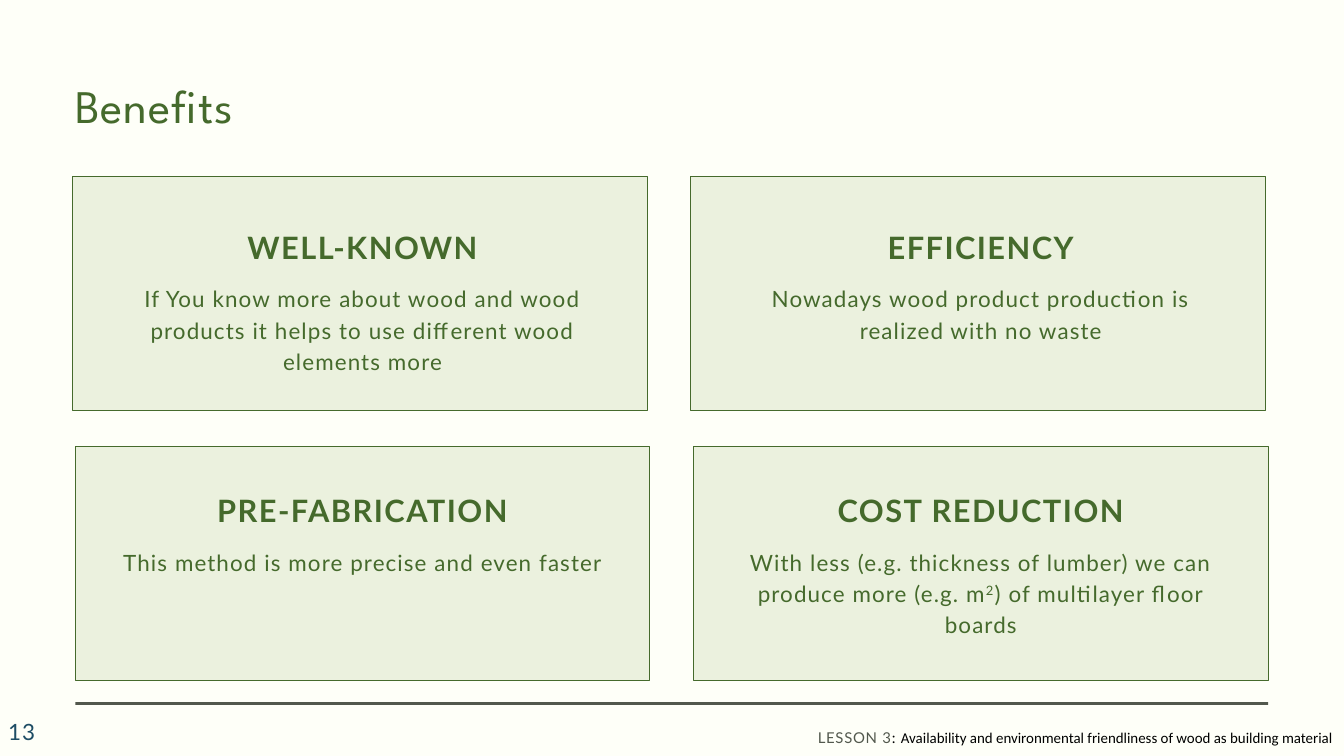
from dataclasses import dataclass

from pptx import Presentation
from pptx.dml.color import RGBColor
from pptx.enum.shapes import MSO_SHAPE
from pptx.enum.text import MSO_ANCHOR, MSO_AUTO_SIZE, PP_ALIGN
from pptx.shapes.autoshape import Shape
from pptx.slide import Slide
from pptx.util import Pt


@dataclass(frozen=True)
class TextStyle:
    font: str
    size: float
    color: str
    spacing: float = 0
    bold: bool = False


@dataclass(frozen=True)
class Theme:
    background: str = "FEFFF8"
    card: str = "EBF1DE"
    green: str = "456A2C"
    rule: str = "52584D"
    title: TextStyle = TextStyle("League Spartan", 50, "456A2C", 1)
    heading: TextStyle = TextStyle("Lato", 33, "456A2C", 1.6, True)
    body: TextStyle = TextStyle("Lato", 24, "456A2C", 1.2)
    number: TextStyle = TextStyle("Lato", 24, "1E4D65", 1.2)
    lesson: TextStyle = TextStyle("Lato", 16, "52584D", 0.8)
    separator: TextStyle = TextStyle("Lato", 16, "000000", 0.8)
    topic: TextStyle = TextStyle("Calibri", 16, "000000")


@dataclass(frozen=True)
class Span:
    text: str
    style: TextStyle
    superscript: bool = False


@dataclass(frozen=True)
class Box:
    left: float
    top: float
    width: float
    height: float


@dataclass(frozen=True)
class Row:
    card_left: float
    card_top: float
    heading_top: float


@dataclass(frozen=True)
class Benefit:
    heading: str
    body: list[Span]
    lines: int


THEME = Theme()
MARGIN = 80.64
COLUMN_PITCH = 662.4
CARD_WIDTH, CARD_HEIGHT = 615.6, 250.56
TEXT_LEFT, TEXT_WIDTH = 122.4, 532.08
HEADING_TO_BODY = 57.6
BODY_LINE = 33.6

ROWS = [Row(77.76, 188.64, 243.36), Row(MARGIN, 478.08, 525.6)]
BENEFITS = [
    [
        Benefit("WELL-KNOWN", [Span("If You know more about wood and wood products it helps "
                                    "to use different wood elements more", THEME.body)], 3),
        Benefit("EFFICIENCY", [Span("Nowadays wood product production is realized "
                                    "with no waste", THEME.body)], 2),
    ],
    [
        Benefit("PRE-FABRICATION",
                [Span("This method is more precise and even faster", THEME.body)], 1),
        Benefit("COST REDUCTION", [
            Span("With less (e.g. thickness of lumber) we can produce more (e.g. m", THEME.body),
            Span("2", THEME.body, superscript=True),
            Span(") of multilayer floor boards", THEME.body),
        ], 3),
    ],
]


def place(shape: Shape, box: Box) -> None:
    shape.left, shape.top = Pt(box.left), Pt(box.top)
    shape.width, shape.height = Pt(box.width), Pt(box.height)


def write(shape: Shape, spans: list[Span], line_height: float,
          alignment: PP_ALIGN = PP_ALIGN.LEFT) -> None:
    """Fill a shape with one paragraph, without insets."""
    frame = shape.text_frame
    frame.word_wrap = True
    frame.auto_size = MSO_AUTO_SIZE.NONE
    frame.vertical_anchor = MSO_ANCHOR.TOP
    frame.margin_left = frame.margin_right = frame.margin_top = frame.margin_bottom = 0
    paragraph = frame.paragraphs[0]
    paragraph.alignment = alignment
    paragraph.line_spacing = Pt(line_height)
    for span in spans:
        run = paragraph.add_run()
        run.text = span.text
        font = run.font
        font.name, font.size, font.bold = span.style.font, Pt(span.style.size), span.style.bold
        font.color.rgb = RGBColor.from_string(span.style.color)
        properties = run._r.get_or_add_rPr()
        properties.set("spc", str(round(span.style.spacing * 100)))
        if span.superscript:
            properties.set("baseline", "30000")


def add_text(slide: Slide, box: Box, spans: list[Span], line_height: float,
             alignment: PP_ALIGN = PP_ALIGN.LEFT) -> Shape:
    shape = slide.shapes.add_textbox(0, 0, 0, 0)
    place(shape, box)
    write(shape, spans, line_height, alignment)
    return shape


def add_rectangle(slide: Slide, box: Box, fill: str, outline: str | None = None) -> None:
    shape = slide.shapes.add_shape(MSO_SHAPE.RECTANGLE, 0, 0, 0, 0)
    place(shape, box)
    shape.shadow.inherit = False
    shape.fill.solid()
    shape.fill.fore_color.rgb = RGBColor.from_string(fill)
    if outline:
        shape.line.color.rgb = RGBColor.from_string(outline)
        shape.line.width = Pt(0.75)
    else:
        shape.line.fill.background()


def add_benefit(slide: Slide, benefit: Benefit, row: Row, column: int) -> None:
    shift = column * COLUMN_PITCH
    left = TEXT_LEFT + shift
    add_rectangle(slide, Box(row.card_left + shift, row.card_top, CARD_WIDTH, CARD_HEIGHT),
                  THEME.card, THEME.green)
    add_text(slide, Box(left, row.heading_top, TEXT_WIDTH, 41.76),
             [Span(benefit.heading, THEME.heading)], 41.2, PP_ALIGN.CENTER)
    add_text(slide, Box(left, row.heading_top + HEADING_TO_BODY, TEXT_WIDTH,
                        benefit.lines * BODY_LINE),
             benefit.body, BODY_LINE, PP_ALIGN.CENTER)


def add_footer(slide: Slide) -> None:
    add_rectangle(slide, Box(MARGIN, 752.4, 1278, 2.88), THEME.rule)
    number = add_text(slide, Box(8.64, 769.68, 160, 28.8), [Span("13", THEME.number)], 28.8)
    number.text_frame.vertical_anchor = MSO_ANCHOR.MIDDLE
    add_text(slide, Box(876.24, 763.2, 563.76, 36), [
        Span("LESSON 3", THEME.lesson),
        Span(": ", THEME.separator),
        Span("Availability and environmental friendliness of wood as building material",
             THEME.topic),
    ], 36.5)


def main() -> None:
    presentation = Presentation()
    presentation.slide_width, presentation.slide_height = Pt(1440), Pt(810)
    slide = presentation.slides.add_slide(presentation.slide_layouts.get_by_name("Title Only"))
    slide.background.fill.solid()
    slide.background.fill.fore_color.rgb = RGBColor.from_string(THEME.background)

    title = slide.shapes.title
    place(title, Box(MARGIN, 75.6, 558, 67.68))
    write(title, [Span("Benefits", THEME.title)], 66.8)

    for row, benefits in zip(ROWS, BENEFITS):
        for column, benefit in enumerate(benefits):
            add_benefit(slide, benefit, row, column)
    add_footer(slide)
    presentation.save("out.pptx")


if __name__ == "__main__":
    main()
